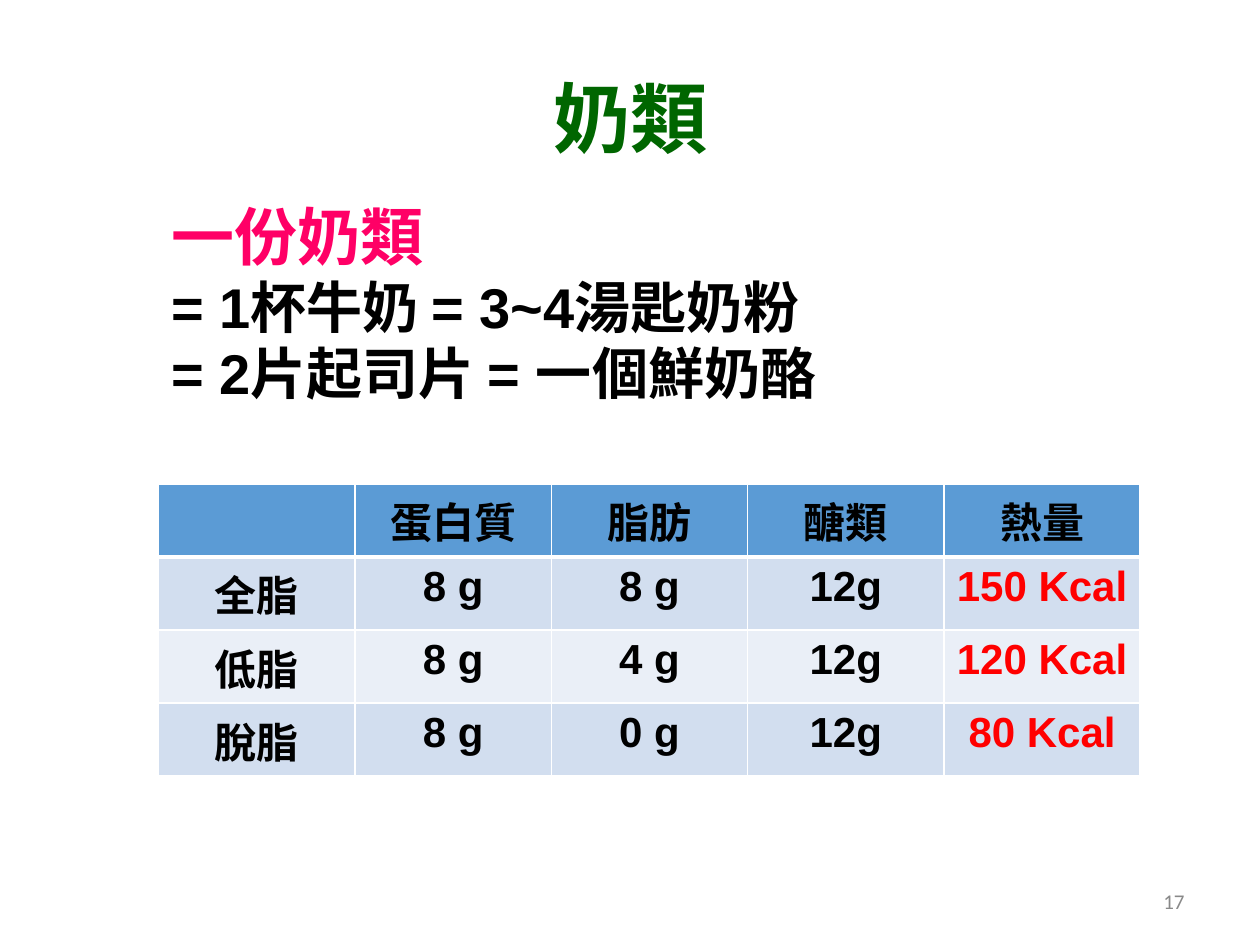
from pptx import Presentation
from pptx.dml.color import RGBColor
from pptx.enum import text
from pptx.oxml import parse_xml
from pptx.oxml.ns import nsdecls, qn
from pptx.util import Inches, Pt

GREEN = RGBColor(0x00, 0x66, 0x00)
PINK = RGBColor(0xFF, 0x00, 0x66)
BLACK = RGBColor(0x00, 0x00, 0x00)
RED = RGBColor(0xFF, 0x00, 0x00)
GREY = RGBColor(0x89, 0x89, 0x89)
HEADER_BLUE = RGBColor(0x5B, 0x9B, 0xD5)
BANDS = [RGBColor(0xD2, 0xDE, 0xEF), RGBColor(0xEA, 0xEF, 0xF7)]
CJK_FONT = "Noto Sans CJK SC"

SERVINGS = [
    ("一份奶類", 36, PINK),
    ("= 1杯牛奶 = 3~4湯匙奶粉", 32, BLACK),
    ("= 2片起司片 = 一個鮮奶酪", 32, BLACK),
]
NUTRIENTS = [
    ["", "蛋白質", "脂肪", "醣類", "熱量"],
    ["全脂", "8 g", "8 g", "12g", "150 Kcal"],
    ["低脂", "8 g", "4 g", "12g", "120 Kcal"],
    ["脫脂", "8 g", "0 g", "12g", "80 Kcal"],
]


def write(para, words, size, color, align, font="Arial", bold=True):
    para.text = words
    para.alignment = align
    for span in para.runs:
        span.font.name = font
        span.font.size = Pt(size)
        span.font.bold = bold
        span.font.color.rgb = color
        span.font._element.append(
            parse_xml(f'<a:ea {nsdecls("a")} typeface="{CJK_FONT}"/>'))


def add_box(page, left, top, width, height, anchor):
    box = page.shapes.add_textbox(
        Inches(left), Inches(top), Inches(width), Inches(height))
    box.text_frame.word_wrap = True
    box.text_frame.vertical_anchor = anchor
    return box.text_frame


def add_servings(page):
    frame = add_box(page, 1.26, 1.59, 7.48, 2.1, text.MSO_ANCHOR.TOP)
    for index, (words, size, color) in enumerate(SERVINGS):
        para = frame.add_paragraph() if index else frame.paragraphs[0]
        write(para, words, size, color, text.PP_ALIGN.LEFT)
        para.line_spacing = 0.9
        para.space_before = Pt(3 if index else 0)


def set_borders(cell, bottom_width):
    properties = cell._tc.get_or_add_tcPr()
    widths = {"lnL": 1, "lnR": 1, "lnT": 1, "lnB": bottom_width}
    for index, (side, width) in enumerate(widths.items()):
        properties.insert(index, parse_xml(
            f'<a:{side} {nsdecls("a")} w="{Pt(width)}"><a:solidFill>'
            f'<a:srgbClr val="FFFFFF"/></a:solidFill></a:{side}>'))


def add_nutrient_table(page):
    rows, columns = len(NUTRIENTS), len(NUTRIENTS[0])
    table = page.shapes.add_table(
        rows, columns, Inches(1.26), Inches(3.84),
        Inches(7.79), Inches(0.58 * rows)).table
    for r, values in enumerate(NUTRIENTS):
        for c, value in enumerate(values):
            cell = table.cell(r, c)
            cell.fill.solid()
            cell.fill.fore_color.rgb = BANDS[(r - 1) % 2] if r else HEADER_BLUE
            set_borders(cell, 1 if r else 3)
            color = RED if r and c == columns - 1 else BLACK
            write(cell.text_frame.paragraphs[0], value, 24, color,
                  text.PP_ALIGN.CENTER)


def main():
    deck = Presentation()
    deck.slide_width, deck.slide_height = Inches(10), Inches(7.5)
    page = deck.slides.add_slide(deck.slide_layouts[6])
    title = add_box(page, 1.67, 0.51, 6.67, 0.83, text.MSO_ANCHOR.MIDDLE)
    write(title.paragraphs[0], "奶類", 44, GREEN, text.PP_ALIGN.CENTER, CJK_FONT)
    add_servings(page)
    add_nutrient_table(page)
    number = add_box(page, 7.17, 6.95, 2.33, 0.4, text.MSO_ANCHOR.MIDDLE)
    write(number.paragraphs[0], "17", 12, GREY, text.PP_ALIGN.RIGHT,
          "Calibri", False)
    deck.save("out.pptx")


if __name__ == "__main__":
    main()
